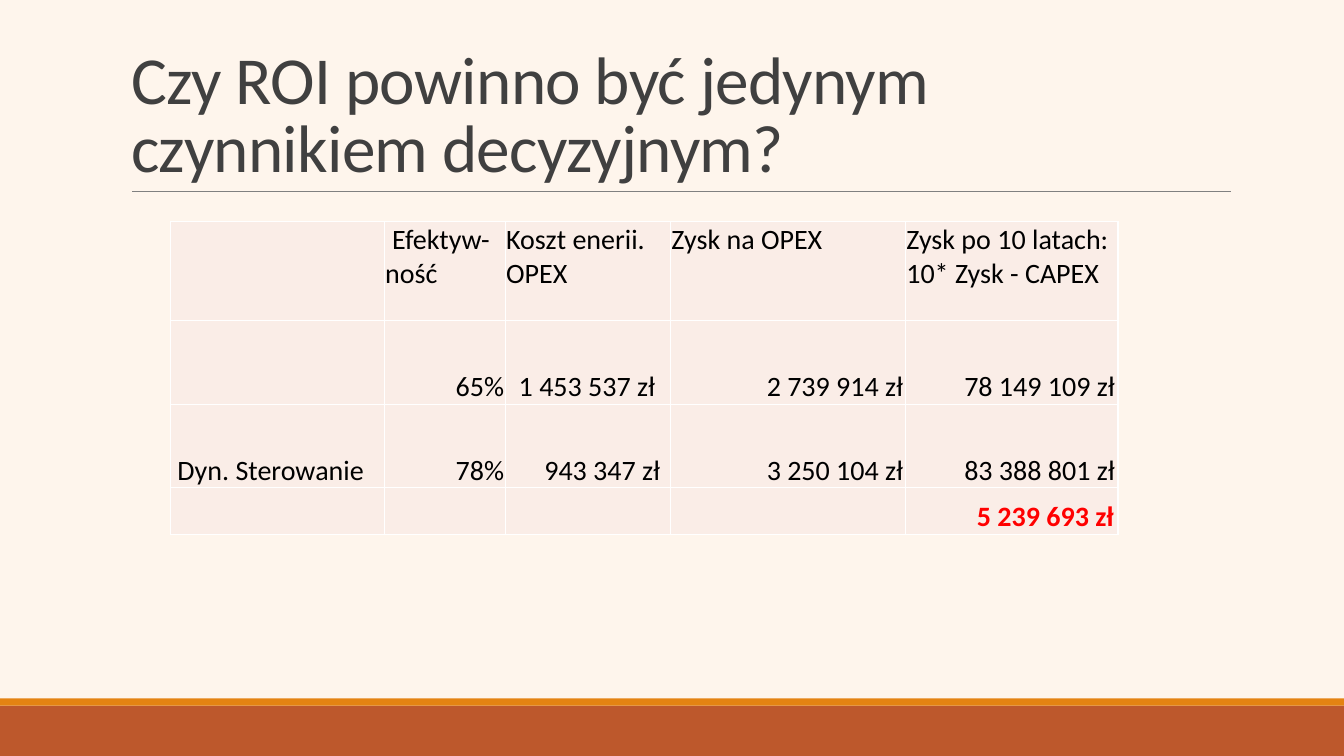
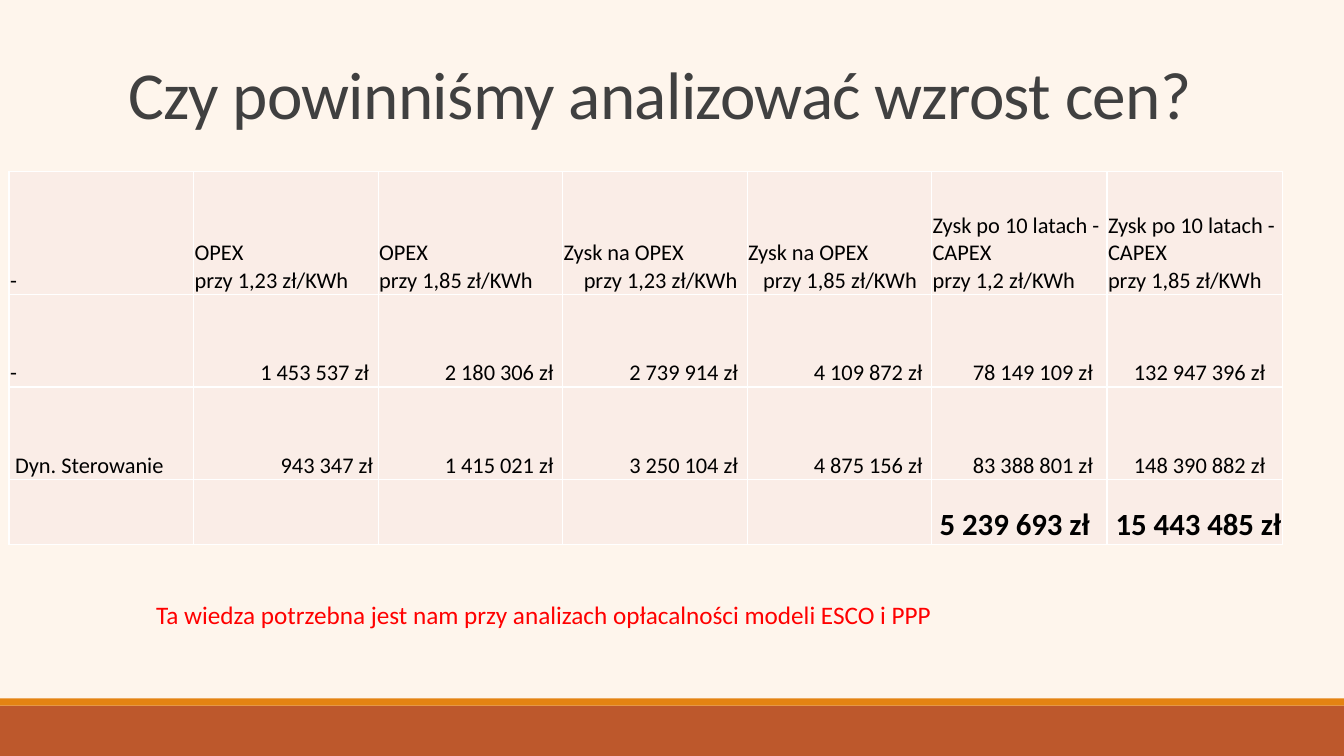
from dataclasses import dataclass
from itertools import product

from lxml import etree
from pptx import Presentation
from pptx import util as u
from pptx.dml.color import RGBColor
from pptx.enum import shapes, text
from pptx.oxml import ns

PX = 9144
FONT = "Calibri"
COLORS = {
    "background": "FEF5EC",
    "band": "BD582C",
    "stripe": "E48312",
    "rule": "808080",
    "title": "404040",
    "cell": "FAEDE7",
    "border": "FFFFFF",
    "body": "000000",
    "accent": "FF0000",
}
TOP, BOTTOM = text.MSO_ANCHOR.TOP, text.MSO_ANCHOR.BOTTOM
LEFT, RIGHT = text.PP_ALIGN.LEFT, text.PP_ALIGN.RIGHT


@dataclass(frozen=True)
class Box:
    left: int
    top: int
    width: int
    height: int

    def emu(self) -> tuple[int, ...]:
        return tuple(px(n) for n in (self.left, self.top, self.width, self.height))


@dataclass(frozen=True)
class Band:
    box: Box
    color: str


@dataclass(frozen=True)
class Line:
    text: str
    indent: int = 0


@dataclass(frozen=True)
class Style:
    size: int
    color: str = "body"
    bold: bool = False


@dataclass(frozen=True)
class Cell:
    lines: tuple[Line, ...] = ()
    style: Style = Style(18)
    align: text.PP_ALIGN = LEFT
    anchor: text.MSO_ANCHOR = BOTTOM
    inset: int = 1


@dataclass(frozen=True)
class Grid:
    left: int
    top: int
    columns: tuple[int, ...]
    rows: tuple[int, ...]
    cells: tuple[tuple[Cell, ...], ...]


BANDS = (
    Band(Box(0, 700, 1333, 50), "band"),
    Band(Box(0, 693, 1333, 7), "stripe"),
)


def px(length: int) -> u.Emu:
    return u.Emu(length * PX)


def rgb(name: str) -> RGBColor:
    return RGBColor.from_string(COLORS[name])


def add_run(paragraph, words: str, style: Style):
    run = paragraph.add_run()
    run.text = words
    run.font.name = FONT
    run.font.size = u.Pt(style.size)
    run.font.bold = style.bold
    run.font.color.rgb = rgb(style.color)
    return run


def prepare_layout(presentation, layout, slide) -> None:
    background = presentation.slide_master.background.fill
    background.solid()
    background.fore_color.rgb = rgb("background")
    for placeholder in list(layout.placeholders):
        if placeholder.placeholder_format.idx != 0:
            placeholder.element.getparent().remove(placeholder.element)
    for band in BANDS:
        shape = slide.shapes.add_shape(shapes.MSO_SHAPE.RECTANGLE, *band.box.emu())
        shape.shadow.inherit = False
        shape.fill.solid()
        shape.fill.fore_color.rgb = rgb(band.color)
        shape.line.fill.background()
        layout.shapes.element.append(shape.element)
    rule = slide.shapes.add_connector(
        shapes.MSO_CONNECTOR.STRAIGHT, px(131), px(190), px(1221), px(190)
    )
    rule.line.color.rgb = rgb("rule")
    rule.line.width = u.Pt(0.5)
    etree.SubElement(rule.element.spPr, ns.qn("a:effectLst"))
    layout.shapes.element.append(rule.element)


def set_title(slide, words: str, left: int, top: int) -> None:
    title = slide.shapes.title
    title.left, title.top, title.width, title.height = Box(left, top, 1100, 159).emu()
    frame = title.text_frame
    frame.word_wrap = True
    frame.auto_size = text.MSO_AUTO_SIZE.NONE
    frame.vertical_anchor = BOTTOM
    paragraph = frame.paragraphs[0]
    paragraph.alignment = LEFT
    paragraph.line_spacing = 0.85
    run = add_run(paragraph, words, Style(48, "title"))
    run._r.get_or_add_rPr().set("spc", "-50")


def add_borders(cell) -> None:
    properties = cell._tc.get_or_add_tcPr()
    for side in ("lnL", "lnR", "lnT", "lnB"):
        line = etree.SubElement(properties, ns.qn(f"a:{side}"), w=str(u.Pt(1)))
        fill = etree.SubElement(line, ns.qn("a:solidFill"))
        etree.SubElement(fill, ns.qn("a:srgbClr"), val=COLORS["border"])


def fill_cell(cell, content: Cell) -> None:
    add_borders(cell)
    cell.fill.solid()
    cell.fill.fore_color.rgb = rgb("cell")
    cell.vertical_anchor = content.anchor
    cell.margin_left = px(content.inset if content.align == LEFT else 1)
    cell.margin_right = px(content.inset if content.align == RIGHT else 1)
    cell.margin_top, cell.margin_bottom = px(1), px(0)
    frame = cell.text_frame
    for index, line in enumerate(content.lines):
        paragraph = frame.add_paragraph() if index else frame.paragraphs[0]
        paragraph.alignment = content.align
        if line.indent:
            paragraph._p.get_or_add_pPr().set("marL", str(px(line.indent)))
        add_run(paragraph, line.text, content.style)


def add_grid(slide, grid: Grid) -> None:
    box = Box(grid.left, grid.top, sum(grid.columns), sum(grid.rows))
    table = slide.shapes.add_table(
        len(grid.rows), len(grid.columns), *box.emu()
    ).table
    table.first_row = table.horz_banding = False
    for column, width in zip(table.columns, grid.columns):
        column.width = px(width)
    for row, height in zip(table.rows, grid.rows):
        row.height = px(height)
    for r, c in product(range(len(grid.rows)), range(len(grid.columns))):
        fill_cell(table.cell(r, c), grid.cells[r][c])


def label(style: Style, *lines: Line, anchor=BOTTOM, inset: int = 1) -> Cell:
    return Cell(lines, style, LEFT, anchor, inset)


def number(style: Style, words: str, inset: int = 1) -> Cell:
    return Cell((Line(words),), style, RIGHT, BOTTOM, inset)


def numbers(style: Style, *pairs: tuple[str, int]) -> tuple[Cell, ...]:
    return tuple(number(style, words, inset) for words, inset in pairs)


def roi_grid() -> Grid:
    body = Style(20)
    headings = (
        (Line("Efektyw-", 7), Line("ność")),
        (Line("Koszt enerii. OPEX"),),
        (Line("Zysk na OPEX"),),
        (Line("Zysk po 10 latach:"), Line("10* Zysk - CAPEX")),
    )
    return Grid(169, 220, (212, 120, 164, 233, 211), (98, 83, 83, 46), (
        (Cell(), *(label(body, *lines, anchor=TOP) for lines in headings)),
        (Cell(), *numbers(body, ("65%", 1), ("1 453 537 zł", 15),
                          ("2 739 914 zł", 2), ("78 149 109 zł", 3))),
        (label(body, Line("Dyn. Sterowanie"), inset=7),
         *numbers(body, ("78%", 1), ("943 347 zł", 10),
                  ("3 250 104 zł", 2), ("83 388 801 zł", 3))),
        (*[Cell()] * 4, number(Style(20, "accent", True), "5 239 693 zł", 4)),
    ))


def price_grid() -> Grid:
    body, total = Style(16), Style(22, bold=True)
    dash = label(body, Line("-"))
    headings = (
        ("OPEX", "przy 1,23 zł/KWh", 0),
        ("OPEX", "przy 1,85 zł/KWh", 0),
        ("Zysk na OPEX", "przy 1,23 zł/KWh", 20),
        ("Zysk na OPEX", "przy 1,85 zł/KWh", 15),
        ("Zysk po 10 latach - CAPEX", "przy 1,2 zł/KWh", 0),
        ("Zysk po 10 latach - CAPEX", "przy 1,85 zł/KWh", 0),
    )
    return Grid(9, 170, (183,) * 5 + (174,) * 2, (122, 92, 92, 64), (
        (dash, *(label(body, Line(name), Line(price, indent))
                 for name, price, indent in headings)),
        (dash, *numbers(body, ("1 453 537 zł", 9), ("2 180 306 zł", 9),
                        ("2 739 914 zł", 9), ("4 109 872 zł", 9),
                        ("78 149 109 zł", 14), ("132 947 396 zł", 17))),
        (label(body, Line("Dyn. Sterowanie"), inset=6),
         *numbers(body, ("943 347 zł", 5), ("1 415 021 zł", 9),
                  ("3 250 104 zł", 9), ("4 875 156 zł", 9),
                  ("83 388 801 zł", 14), ("148 390 882 zł", 17))),
        (*[Cell()] * 5,
         *numbers(total, ("5 239 693 zł", 17), ("15 443 485 zł", 1))),
    ))


def add_note(slide, words: str) -> None:
    box = slide.shapes.add_textbox(*Box(145, 590, 993, 40).emu())
    box.text_frame.word_wrap = True
    box.text_frame.auto_size = text.MSO_AUTO_SIZE.SHAPE_TO_FIT_TEXT
    add_run(box.text_frame.paragraphs[0], words, Style(18, "accent"))


def main() -> None:
    presentation = Presentation()
    presentation.slide_width, presentation.slide_height = px(1333), px(750)
    layout = presentation.slide_layouts[5]

    roi = presentation.slides.add_slide(layout)
    prepare_layout(presentation, layout, roi)
    set_title(roi, "Czy ROI powinno być jedynym czynnikiem decyzyjnym?", 120, 31)
    add_grid(roi, roi_grid())

    prices = presentation.slides.add_slide(layout)
    set_title(prices, "Czy powinniśmy analizować wzrost cen?", 117, -22)
    add_grid(prices, price_grid())
    add_note(
        prices,
        "Ta wiedza potrzebna jest nam przy analizach opłacalności modeli ESCO i PPP",
    )
    presentation.save("out.pptx")


if __name__ == "__main__":
    main()
